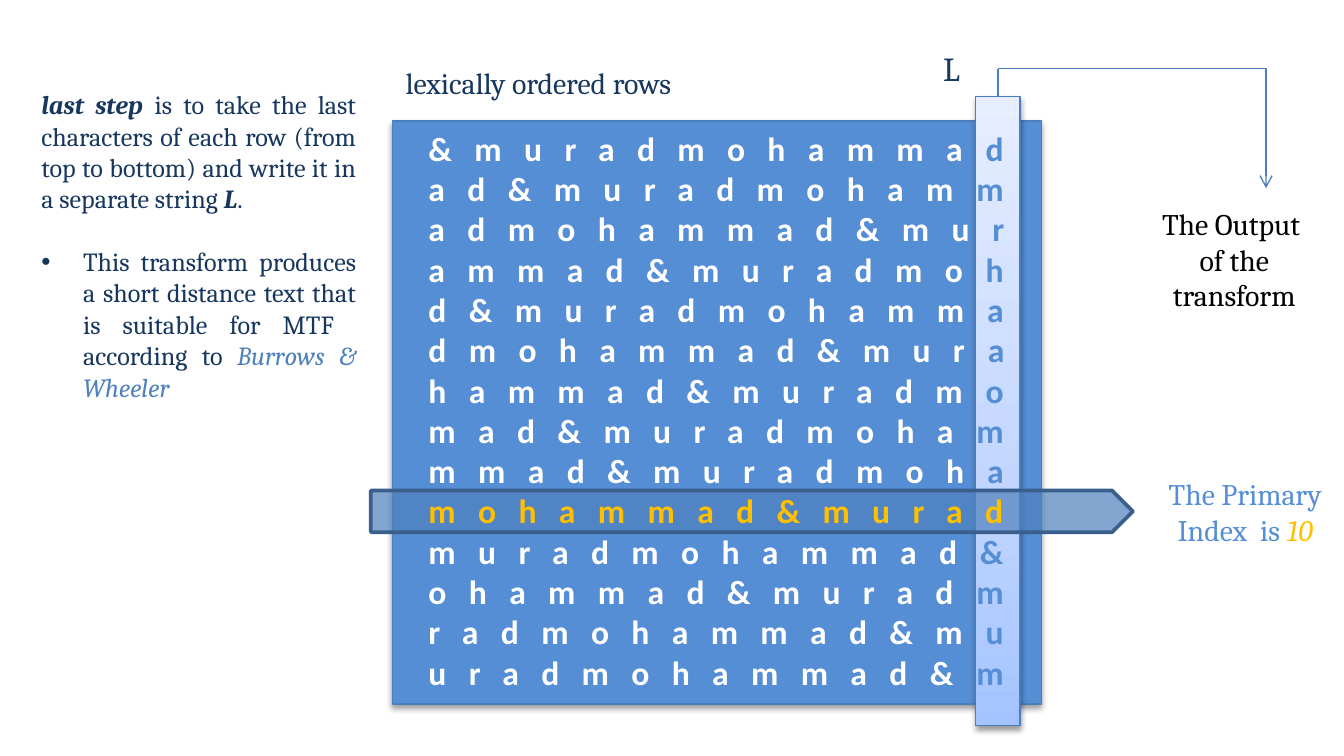
from lxml.etree import SubElement
from pptx import Presentation
from pptx.dml.color import RGBColor
from pptx.enum.shapes import MSO_CONNECTOR as Link, MSO_SHAPE as Preset
from pptx.enum.text import MSO_AUTO_SIZE as AutoSize, PP_ALIGN as Align
from pptx.oxml.ns import qn
from pptx.util import Inches, Pt

WORD = "mohammad&murad"
ROTATIONS = sorted(WORD[i:] + WORD[:i] for i in range(len(WORD)))

NAVY, BLUE, STEEL, GOLD = "17375E", "558ED5", "4F81BD", "FFC000"
WHITE, BLACK, EDGE, DARK_EDGE = "FFFFFF", "000000", "4B7EBC", "3A5F8C"
COLUMN_STOPS = [(0, "A4C4FF"), (35, "BFD4FF"), (100, "E6EEFF")]

STRONG = {"bold": True, "italic": True}
LAST_STEP = [
    [("last step ", NAVY, STRONG),
     ("is to take the last characters of each row (from top to bottom) "
      "and write it in a separate string ", NAVY, {}),
     ("L", NAVY, STRONG), (".", NAVY, {})],
    [("This transform produces a short distance text that is suitable for MTF  "
      "according to ", NAVY, {}),
     ("Burrows & Wheeler ", STEEL, {"italic": True})],
]
CAPTION = [[("lexically ordered rows", NAVY, {})]]
COLUMN_NAME = [[("L", NAVY, {})]]
OUTPUT = [[(line, BLACK, {})] for line in ("The Output", " of the", " transform")]
INDEX = [[("The Primary Index  is ", BLUE, {}),
          (str(ROTATIONS.index(WORD) + 1), GOLD, {"italic": True})]]
MATRIX = [[(row, GOLD, {})] if row == WORD
          else [(row[:-1], WHITE, {}), (row[-1], BLUE, {})] for row in ROTATIONS]

SLIDE_WIDTH = 10
SLIDE_HEIGHT = SLIDE_WIDTH * 9 / 16
MATRIX_TOP, MATRIX_HEIGHT = 0.9, 4.34
COLUMN_LEFT, COLUMN_TOP, COLUMN_WIDTH = 7.26, 0.72, 0.33
COLUMN_MIDDLE = COLUMN_LEFT + COLUMN_WIDTH / 2
ARROW_TOP, ARROW_RIGHT, ARROW_END = 0.51, 9.42, 1.4

deck = Presentation()
deck.slide_width, deck.slide_height = Inches(SLIDE_WIDTH), Inches(SLIDE_HEIGHT)
slide = deck.slides.add_slide(deck.slide_layouts[6])


def rgb(color):
    return RGBColor.from_string(color)


def add(parent, tag, **attributes):
    return SubElement(parent, qn(tag), {k: str(v) for k, v in attributes.items()})


def add_panel(preset, box, fill, edge, width):
    panel = slide.shapes.add_shape(preset, *map(Inches, box))
    panel.shadow.inherit = False
    panel.fill.solid()
    panel.fill.fore_color.rgb = rgb(fill)
    panel.line.color.rgb = rgb(edge)
    panel.line.width = Pt(width)
    return panel


def drop_shadow(panel):
    effects = panel._element.spPr.find(qn("a:effectLst"))
    shadow = add(effects, "a:outerShdw", blurRad=Pt(3.1), dist=Pt(1.6),
                 dir=90 * 60000, rotWithShape=0)
    add(add(shadow, "a:srgbClr", val=BLACK), "a:alpha", val=38000)


def shade(panel, stops, angle):
    panel.fill.gradient()
    panel.fill.gradient_angle = 360 - angle
    stop_list = panel._element.spPr.find(qn("a:gradFill")).find(qn("a:gsLst"))
    for stop in list(stop_list):
        stop_list.remove(stop)
    for share, color in stops:
        add(add(stop_list, "a:gs", pos=share * 1000), "a:srgbClr", val=color)


def add_text(box, paragraphs, size, font="Cambria", align=Align.LEFT, wrap=True, bold=None):
    frame = slide.shapes.add_textbox(*map(Inches, box)).text_frame
    frame.word_wrap = wrap
    frame.auto_size = AutoSize.SHAPE_TO_FIT_TEXT
    for i, runs in enumerate(paragraphs):
        paragraph = frame.paragraphs[0] if i == 0 else frame.add_paragraph()
        paragraph.alignment = align
        paragraph.font.size, paragraph.font.name = Pt(size), font
        paragraph.font.bold = bold
        for words, color, styles in runs:
            run = paragraph.add_run()
            run.text = words
            run.font.color.rgb = rgb(color)
            for style, value in styles.items():
                setattr(run.font, style, value)
    return frame.paragraphs


def add_link(kind, start, end):
    link = slide.shapes.add_connector(kind, *map(Inches, start + end))
    link.line.color.rgb = rgb(EDGE)
    link.line.width = Pt(0.75)
    add(link._element.spPr, "a:effectLst")
    return link


drop_shadow(add_panel(Preset.RECTANGLE, (2.92, MATRIX_TOP, 4.83, MATRIX_HEIGHT), BLUE, EDGE, 0.75))
add_text((2.92, 0.43, 3, 0.37), CAPTION, 16)

last_column = add_panel(Preset.RECTANGLE, (COLUMN_LEFT, COLUMN_TOP, COLUMN_WIDTH, 4.68),
                        WHITE, EDGE, 0.75)
shade(last_column, COLUMN_STOPS, 270)
drop_shadow(last_column)

corner = (COLUMN_MIDDLE, ARROW_TOP)
output_arrow = add_link(Link.ELBOW, corner, (ARROW_RIGHT, ARROW_END))
bend = output_arrow._element.spPr.find(qn("a:prstGeom")).find(qn("a:avLst"))
add(bend, "a:gd", name="adj1", fmla="val 100000")
add(output_arrow.line._get_or_add_ln(), "a:tailEnd", type="arrow")
stem = add_link(Link.STRAIGHT, corner, (COLUMN_MIDDLE, COLUMN_TOP))
stem.end_connect(last_column, 0)

index_arrow = add_panel(Preset.PENTAGON, (2.76, 3.65, 5.67, 0.31), STEEL, DARK_EDGE, 2)
tint = index_arrow._element.spPr.find(qn("a:solidFill"))[0]
add(tint, "a:alpha", val=70000)

add_text((8.41, 1.48, 1.5, 1.25), OUTPUT, 16, align=Align.CENTER)
for row in add_text((3.09, MATRIX_TOP, 5, MATRIX_HEIGHT), MATRIX, 18, "Calibri", bold=True):
    for run in row.runs:
        run.font._element.set("spc", "1200")
add_text((8.44, 3.49, 1.65, 0.64), INDEX, 16, align=Align.CENTER)

remark = add_text((0.21, 0.61, 2.54, 2.93), LAST_STEP, 14, align=Align.JUSTIFY)[1]
remark.space_before = Pt(16.8)
layout = remark._element.get_or_add_pPr()
layout.set("marL", str(Inches(0.31)))
layout.set("indent", str(-Inches(0.31)))
bullet_font = add(layout, "a:buFont", typeface="Arial")
bullet = add(layout, "a:buChar", char="•")
defaults = layout.find(qn("a:defRPr"))
defaults.addprevious(bullet_font)
defaults.addprevious(bullet)
add_text((6.92, 0.31, 0.34, 0.4), COLUMN_NAME, 18, wrap=False)

deck.save("out.pptx")
